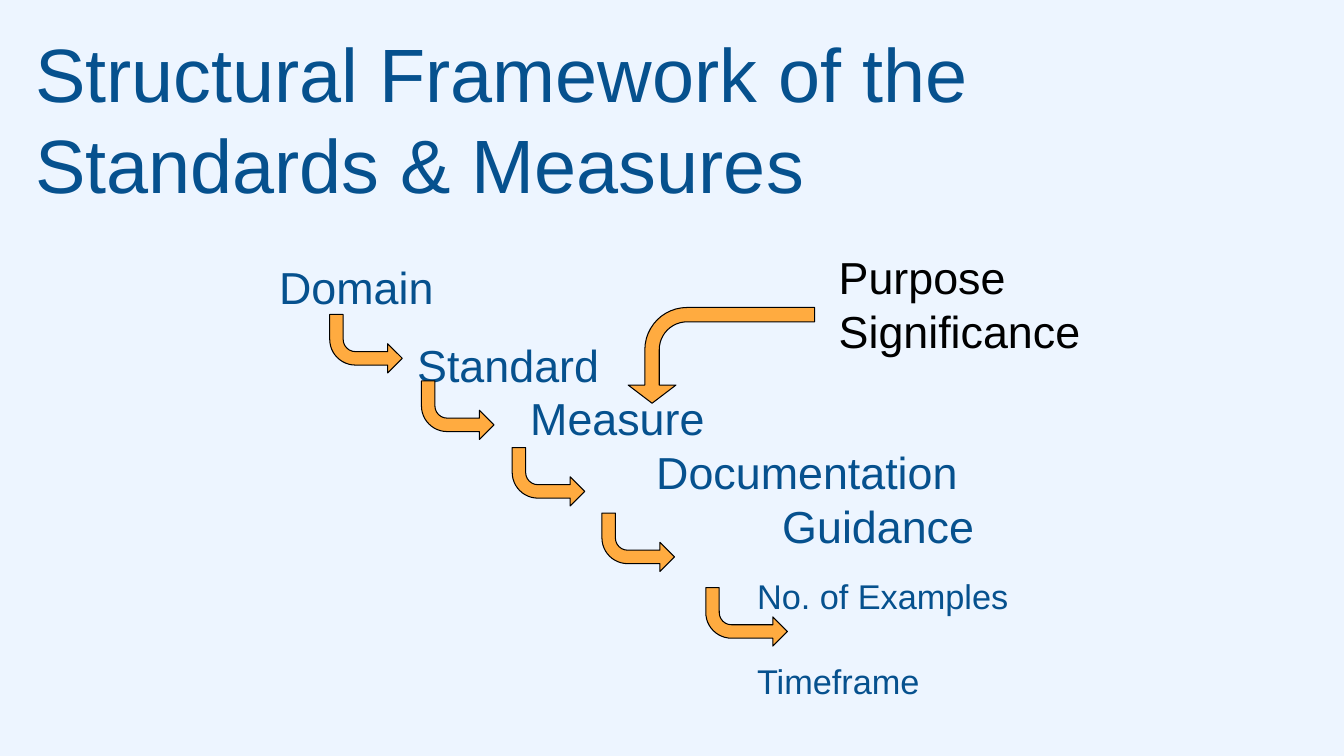
import pptx
import pptx.dml.color
import pptx.enum.shapes
import pptx.enum.text
import pptx.util

Inches = pptx.util.Inches
Pt = pptx.util.Pt
RGBColor = pptx.dml.color.RGBColor
ANCHOR = pptx.enum.text.MSO_ANCHOR

PALE_BLUE = RGBColor(0xED, 0xF5, 0xFF)
DEEP_BLUE = RGBColor(0x06, 0x51, 0x8E)
ORANGE = RGBColor(0xFF, 0xAB, 0x40)
BLACK = RGBColor(0, 0, 0)

# text, indent in inches, size, line spacing, space before, space after
LEVELS = [
    ("Domain", 1, 32, 1, 0, 0),
    ("Standard", 2.37, 32, 1.15, 11, 0),
    ("Measure", 3.49, 32, 1, 0, 0),
    ("Documentation", 4.74, 32, 1, 0, 0),
    ("Guidance", 5.99, 32, 1, 0, 0),
    ("No. of Examples", 5.74, 24.5, 1, 16, 16),
    ("Timeframe", 5.74, 24.5, 1, 16, 16),
]
STEP_ARROWS = [
    (3.27, 3.12, 0.72),
    (4.18, 3.78, 0.72),
    (5.08, 4.44, 0.72),
    (5.97, 5.09, 0.72),
    (7, 5.83, 0.81),
]


def add_text(slide, box, lines, size, color, anchor=ANCHOR.TOP):
    """Write lines into a wrapping text box and return its paragraphs."""
    frame = slide.shapes.add_textbox(*map(Inches, box)).text_frame
    frame.word_wrap = True
    frame.vertical_anchor = anchor
    frame.margin_left = frame.margin_right = Inches(0.1)
    frame.margin_top = frame.margin_bottom = Inches(0.1)
    frame.text = "\n".join(lines)
    for paragraph in frame.paragraphs:
        paragraph.font.name = "Arial"
        paragraph.font.size = Pt(size)
        paragraph.font.color.rgb = color
    return frame.paragraphs


def add_levels(slide, box):
    """Write the framework levels as a descending staircase."""
    names = [level[0] for level in LEVELS]
    paragraphs = add_text(slide, box, names, 32, DEEP_BLUE)
    for paragraph, level in zip(paragraphs, LEVELS):
        _, indent, size, spacing, before, after = level
        properties = paragraph._p.get_or_add_pPr()
        properties.set("marL", str(Inches(indent)))
        properties.set("indent", "0")
        paragraph.font.size = Pt(size)
        paragraph.line_spacing = spacing
        paragraph.space_before = Pt(before)
        paragraph.space_after = Pt(after)


def add_bent_arrow(slide, box, adjustments, rotation=0):
    """Draw a vertically flipped bent arrow in the box."""
    arrow = slide.shapes.add_shape(
        pptx.enum.shapes.MSO_SHAPE.BENT_ARROW, *map(Inches, box))
    for index, value in enumerate(adjustments):
        arrow.adjustments[index] = value
    arrow.rotation = rotation
    arrow._element.spPr.xfrm.set("flipV", "1")
    arrow.shadow.inherit = False
    arrow.fill.solid()
    arrow.fill.fore_color.rgb = ORANGE
    arrow.line.color.rgb = BLACK
    arrow.line.width = Pt(0.75)


def add_framework_slide(presentation):
    """Build the slide from its title, staircase, arrows and side note."""
    slide = presentation.slides.add_slide(presentation.slide_layouts[6])
    slide.background.fill.solid()
    slide.background.fill.fore_color.rgb = PALE_BLUE
    add_text(slide, (0.25, 0.17, 12.67, 1.84),
             ["Structural Framework of the Standards & Measures"], 54, DEEP_BLUE)
    add_levels(slide, (1.67, 2.48, 8.5, 4.49))
    for left, top, width in STEP_ARROWS:
        add_bent_arrow(slide, (left, top, width, 0.58), (0.23, 0.25, 0.25, 0.44))
    add_bent_arrow(slide, (6.68, 2.6, 0.95, 1.85), (0.15, 0.25, 0.19, 0.44), 90)
    add_text(slide, (8.22, 2.55, 2.65, 0.92), ["Purpose", "Significance"],
             32, BLACK, ANCHOR.MIDDLE)


def main():
    """Create and save the presentation."""
    presentation = pptx.Presentation()
    presentation.slide_width = Inches(13.33)
    presentation.slide_height = Inches(7.5)
    add_framework_slide(presentation)
    presentation.save("out.pptx")


if __name__ == "__main__":
    main()
